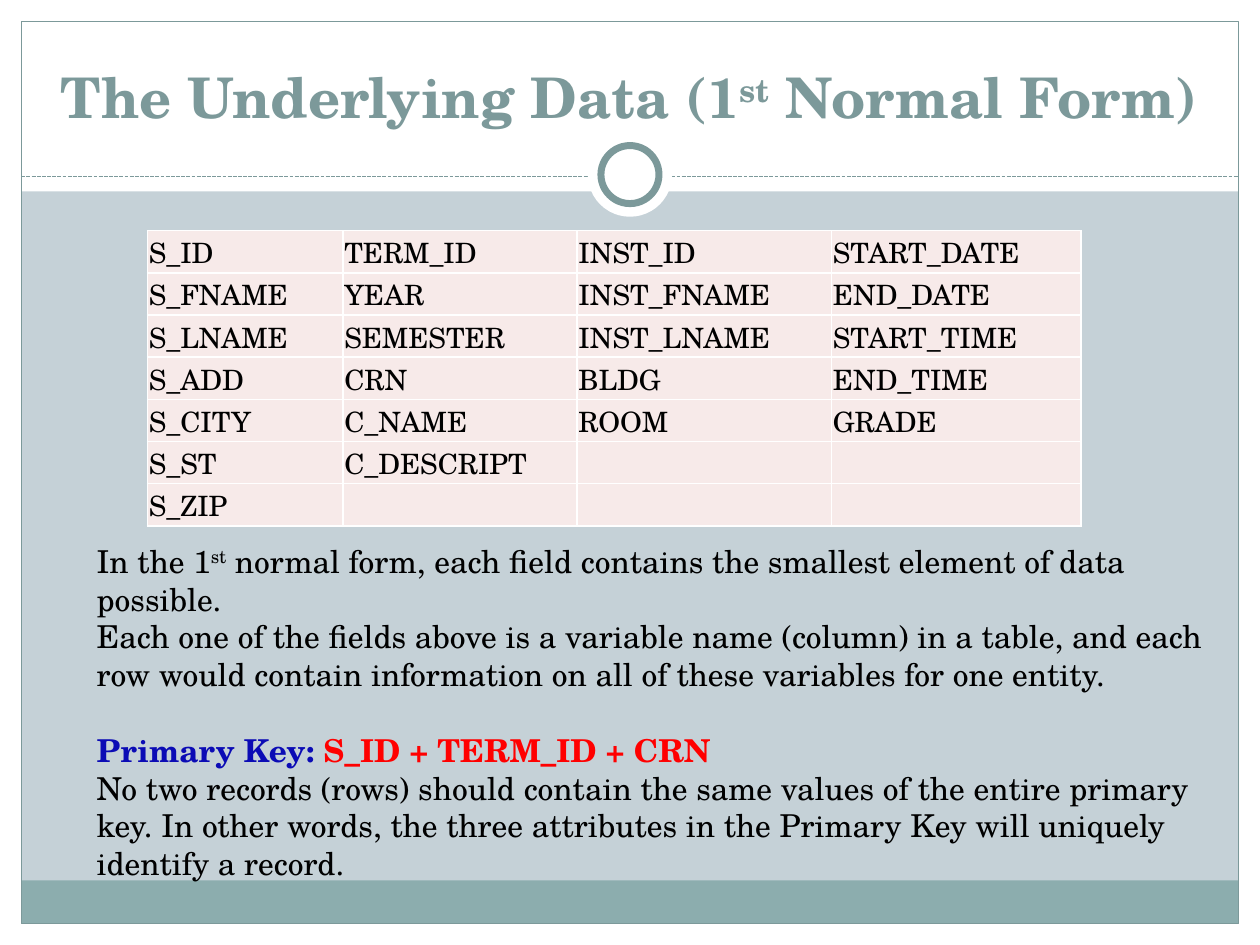
import dataclasses
import typing

import lxml.etree
import pptx
import pptx.dml.color
import pptx.enum.dml
import pptx.enum.shapes
import pptx.enum.text
import pptx.oxml.ns
import pptx.util

Cm = pptx.util.Cm
Pt = pptx.util.Pt
Shapes = pptx.enum.shapes.MSO_SHAPE
Anchor = pptx.enum.text.MSO_ANCHOR
Align = pptx.enum.text.PP_ALIGN


@dataclasses.dataclass(frozen=True)
class Theme:
    font: str = "TeX Gyre Schola"
    background: str = "C5D1D7"
    white: str = "FFFFFF"
    accent: str = "7C999A"
    footer: str = "8CADAE"
    cell: str = "F7EAE9"
    text: str = "000000"
    label: str = "0B0BB5"
    key: str = "FF0000"
    title_size: float = 32
    body_size: float = 18
    table_size: float = 16


THEME = Theme()


class Box(typing.NamedTuple):
    left: float
    top: float
    width: float
    height: float

    def lengths(self) -> list[pptx.util.Length]:
        return [Cm(value) for value in self]


class Panel(typing.NamedTuple):
    box: Box
    fill: str | None = None
    line: str | None = None
    line_width: float = 0.75
    kind: Shapes = Shapes.RECTANGLE


class Span(typing.NamedTuple):
    text: str
    color: str | None = None
    superscript: bool = False


class Line(typing.NamedTuple):
    spans: list[Span]
    size: float
    color: str = THEME.text
    bold: bool = False
    align: Align = Align.LEFT
    space_before: float = 0


WIDTH, HEIGHT, MARGIN = 25.4, 19.05, 0.43
INNER_WIDTH = WIDTH - 2 * MARGIN
RULE_Y = 3.56
MEDALLION_Y = 3.52


def medallion(diameter: float) -> Box:
    return Box((WIDTH - diameter) / 2, MEDALLION_Y - diameter / 2, diameter, diameter)


FRAME = [
    Panel(Box(0, HEIGHT - MARGIN, WIDTH, MARGIN), THEME.white),
    Panel(Box(0, 0, WIDTH, 3.86), THEME.white),
    Panel(Box(0, 0, MARGIN, HEIGHT), THEME.white),
    Panel(Box(WIDTH - MARGIN, 0, MARGIN, HEIGHT), THEME.white),
    Panel(Box(MARGIN, 17.75, INNER_WIDTH, 0.87), THEME.footer),
    Panel(Box(MARGIN, MARGIN, INNER_WIDTH, HEIGHT - 2 * MARGIN), line=THEME.accent),
]
MEDALLION = [
    Panel(medallion(1.7), THEME.white, kind=Shapes.OVAL),
    Panel(medallion(1.17), THEME.white, THEME.accent, 4, Shapes.OVAL),
]

TITLE = [
    Line(
        [Span("The Underlying Data (1"), Span("st", superscript=True), Span(" Normal Form)")],
        THEME.title_size, THEME.accent, True, Align.CENTER,
    )
]
BODY = [
    Line(
        [
            Span("In the 1"),
            Span("st", superscript=True),
            Span(" normal form, each field contains the smallest element of data possible."),
        ],
        THEME.body_size,
    ),
    Line(
        [Span("Each one of the fields above is a variable name (column) in a table, and each row "
              "would contain information on all of these variables for one entity.")],
        THEME.body_size,
    ),
    Line(
        [Span("Primary Key: ", THEME.label), Span("S_ID + TERM_ID + CRN", THEME.key)],
        THEME.body_size, bold=True, space_before=21.6,
    ),
    Line(
        [Span("No two records (rows) should contain the same values of the entire primary key. "
              "In other words, the three attributes in the Primary Key will uniquely identify "
              "a record.")],
        THEME.body_size,
    ),
]

FIELD_COLUMNS = [
    ["S_ID", "S_FNAME", "S_LNAME", "S_ADD", "S_CITY", "S_ST", "S_ZIP"],
    ["TERM_ID", "YEAR", "SEMESTER", "CRN", "C_NAME", "C_DESCRIPT"],
    ["INST_ID", "INST_FNAME", "INST_LNAME", "BLDG", "ROOM"],
    ["START_DATE", "END_DATE", "START_TIME", "END_TIME", "GRADE"],
]
COLUMN_WIDTHS = [3.94, 4.72, 5.13, 5.03]
ROW_HEIGHT = 0.85


def rgb(color: str) -> pptx.dml.color.RGBColor:
    return pptx.dml.color.RGBColor.from_string(color)


def draw_panel(slide: pptx.slide.Slide, panel: Panel) -> None:
    shape = slide.shapes.add_shape(panel.kind, *panel.box.lengths())
    shape.shadow.inherit = False
    if panel.fill:
        shape.fill.solid()
        shape.fill.fore_color.rgb = rgb(panel.fill)
    else:
        shape.fill.background()
    if panel.line:
        shape.line.color.rgb = rgb(panel.line)
        shape.line.width = Pt(panel.line_width)
    else:
        shape.line.fill.background()


def draw_rule(slide: pptx.slide.Slide) -> None:
    rule = slide.shapes.add_connector(
        pptx.enum.shapes.MSO_CONNECTOR.STRAIGHT,
        Cm(MARGIN), Cm(RULE_Y), Cm(WIDTH - MARGIN), Cm(RULE_Y),
    )
    rule.line.color.rgb = rgb(THEME.accent)
    rule.line.width = Pt(0.75)
    rule.line.dash_style = pptx.enum.dml.MSO_LINE.SQUARE_DOT
    properties = rule._element.spPr
    lxml.etree.SubElement(properties, pptx.oxml.ns.qn("a:effectLst"))


def write_lines(frame: pptx.text.text.TextFrame, lines: list[Line]) -> None:
    for index, line in enumerate(lines):
        paragraph = frame.add_paragraph() if index else frame.paragraphs[0]
        paragraph.alignment = line.align
        paragraph.space_before = Pt(line.space_before)
        paragraph.font.name = THEME.font
        paragraph.font.size = Pt(line.size)
        paragraph.font.bold = line.bold
        paragraph.font.color.rgb = rgb(line.color)
        for span in line.spans:
            run = paragraph.add_run()
            run.text = span.text
            if span.color:
                run.font.color.rgb = rgb(span.color)
            if span.superscript:
                run._r.get_or_add_rPr().set("baseline", "30000")


def draw_text(slide: pptx.slide.Slide, box: Box, lines: list[Line], anchor: Anchor) -> None:
    frame = slide.shapes.add_textbox(*box.lengths()).text_frame
    frame.word_wrap = True
    frame.vertical_anchor = anchor
    write_lines(frame, lines)


def add_borders(cell: pptx.table._Cell) -> None:
    properties = cell._tc.get_or_add_tcPr()
    for side in ("lnL", "lnR", "lnT", "lnB"):
        border = lxml.etree.SubElement(properties, pptx.oxml.ns.qn(f"a:{side}"), w=str(Pt(1)))
        fill = lxml.etree.SubElement(border, pptx.oxml.ns.qn("a:solidFill"))
        lxml.etree.SubElement(fill, pptx.oxml.ns.qn("a:srgbClr"), val=THEME.white)


def draw_table(slide: pptx.slide.Slide, left: float, top: float) -> None:
    row_count = max(map(len, FIELD_COLUMNS))
    box = Box(left, top, sum(COLUMN_WIDTHS), ROW_HEIGHT * row_count)
    table = slide.shapes.add_table(row_count, len(FIELD_COLUMNS), *box.lengths()).table
    table.first_row = table.horz_banding = False
    for column, (fields, width) in enumerate(zip(FIELD_COLUMNS, COLUMN_WIDTHS)):
        table.columns[column].width = Cm(width)
        for row in range(row_count):
            cell = table.cell(row, column)
            add_borders(cell)
            cell.fill.solid()
            cell.fill.fore_color.rgb = rgb(THEME.cell)
            cell.margin_left = cell.margin_right = cell.margin_top = Cm(0.03)
            cell.margin_bottom = 0
            cell.vertical_anchor = Anchor.BOTTOM
            spans = [Span(field) for field in fields[row:row + 1]]
            write_lines(cell.text_frame, [Line(spans, THEME.table_size)])


def main() -> None:
    presentation = pptx.Presentation()
    presentation.slide_width, presentation.slide_height = Cm(WIDTH), Cm(HEIGHT)
    slide = presentation.slides.add_slide(presentation.slide_layouts[6])
    slide.background.fill.solid()
    slide.background.fill.fore_color.rgb = rgb(THEME.background)
    for panel in FRAME:
        draw_panel(slide, panel)
    draw_rule(slide)
    for panel in MEDALLION:
        draw_panel(slide, panel)
    draw_text(slide, Box(0.84, 0.64, 23.7, 2.11), TITLE, Anchor.BOTTOM)
    draw_table(slide, 2.97, 4.65)
    draw_text(slide, Box(1.7, 10.8, 22.86, 6.4), BODY, Anchor.TOP)
    presentation.save("out.pptx")


if __name__ == "__main__":
    main()
